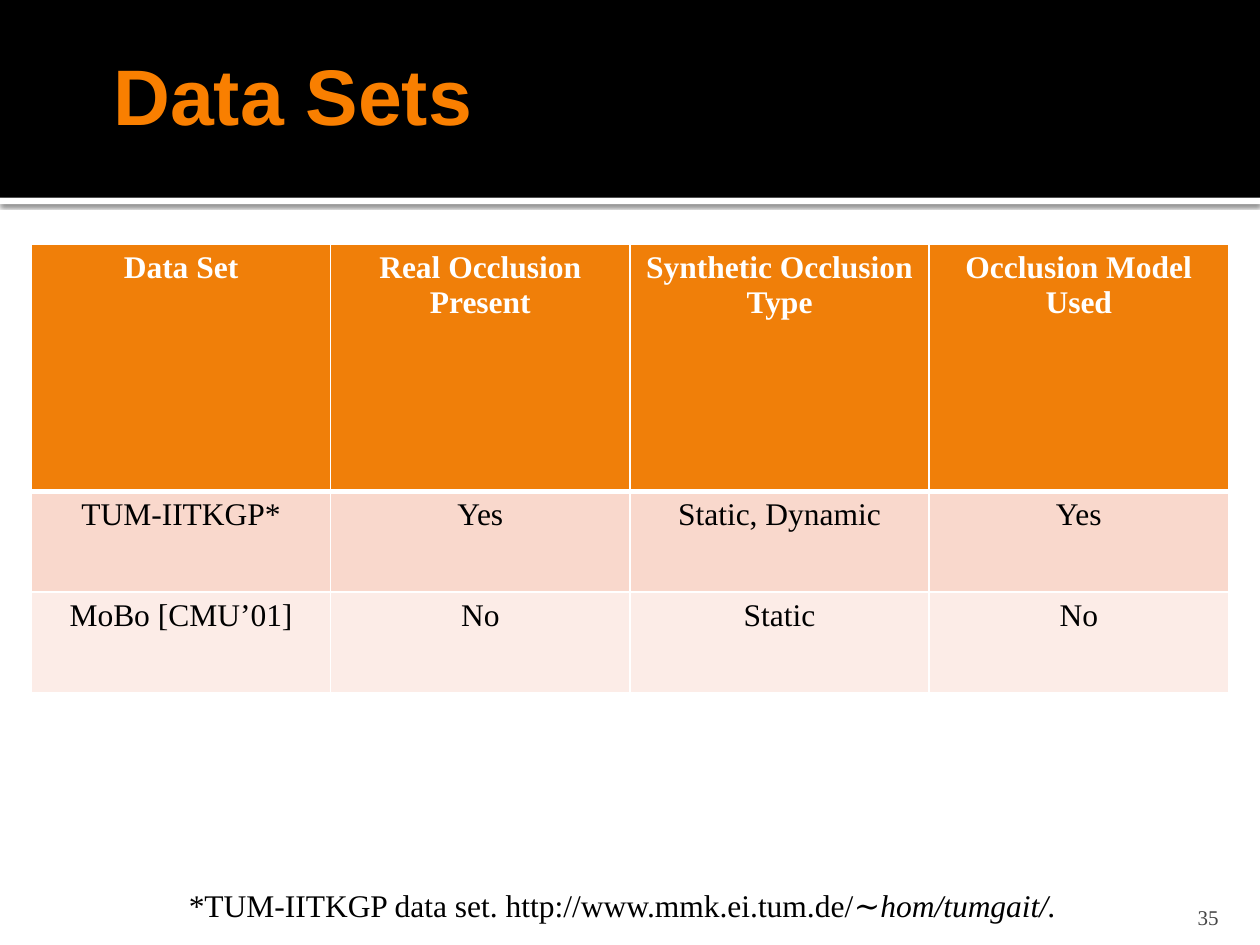
from pptx import Presentation
from pptx.dml.color import RGBColor
from pptx.enum.shapes import MSO_SHAPE as Shape
from pptx.enum.text import MSO_ANCHOR as Anchor, PP_ALIGN as Align
from pptx.oxml import parse_xml
from pptx.oxml.ns import nsdecls
from pptx.util import Inches, Pt

WHITE = RGBColor(0xFF, 0xFF, 0xFF)
BLACK = RGBColor(0x00, 0x00, 0x00)
TITLE_ORANGE = RGBColor(0xF9, 0x7F, 0x00)
HEADER_ORANGE = RGBColor(0xF0, 0x7F, 0x09)
DARK_PINK = RGBColor(0xF9, 0xD8, 0xCC)
LIGHT_PINK = RGBColor(0xFC, 0xEC, 0xE7)
GREY = RGBColor(0x45, 0x45, 0x45)

SERIF = "Times New Roman"
ROW_FILLS = [HEADER_ORANGE, DARK_PINK, LIGHT_PINK]
ROW_HEIGHTS = [1.96, 0.8, 0.8]
DATA_SETS = [
    ["Data Set", "Real Occlusion Present", "Synthetic Occlusion\nType", "Occlusion Model Used"],
    ["TUM-IITKGP*", "Yes", "Static, Dynamic", "Yes"],
    ["MoBo [CMU’01]", "No", "Static", "No"],
]


def style_font(font, size, color, name=SERIF, bold=False):
    font.name = name
    font.size = Pt(size)
    font.color.rgb = color
    font.bold = bold


def add_band(slide, top, height, color):
    band = slide.shapes.add_shape(Shape.RECTANGLE, 0, Inches(top), Inches(10), Inches(height))
    band.shadow.inherit = False
    band.fill.solid()
    band.fill.fore_color.rgb = color
    band.line.fill.background()
    return band


def add_drop_shadow(band):
    effects = band._element.spPr.find("{http://schemas.openxmlformats.org/drawingml/2006/main}effectLst")
    effects.append(parse_xml(
        f'<a:outerShdw {nsdecls("a")} blurRad="{Pt(2.5)}" dist="{Pt(0.8)}" dir="5400000" '
        'algn="tl" rotWithShape="0"><a:srgbClr val="000000"><a:alpha val="60000"/>'
        '</a:srgbClr></a:outerShdw>'))


def add_text(slide, left, top, width, height, text, anchor=Anchor.TOP):
    box = slide.shapes.add_textbox(Inches(left), Inches(top), Inches(width), Inches(height))
    frame = box.text_frame
    frame.word_wrap = True
    frame.vertical_anchor = anchor
    frame.text = text
    return frame


def set_borders(cell, widths):
    properties = cell._tc.get_or_add_tcPr()
    for side, width in zip("LRTB", widths):
        properties.append(parse_xml(
            f'<a:ln{side} {nsdecls("a")} w="{Pt(width)}"><a:solidFill>'
            f'<a:srgbClr val="{WHITE}"/></a:solidFill></a:ln{side}>'))


def add_data_table(slide):
    rows, columns = len(DATA_SETS), len(DATA_SETS[0])
    table = slide.shapes.add_table(rows, columns, Inches(0.25), Inches(1.94),
                                   Inches(9.5), Inches(sum(ROW_HEIGHTS))).table
    for r, (values, fill, height) in enumerate(zip(DATA_SETS, ROW_FILLS, ROW_HEIGHTS)):
        table.rows[r].height = Inches(height)
        is_header = r == 0
        for c, value in enumerate(values):
            cell = table.cell(r, c)
            # A thick rule separates the header from the body
            set_borders(cell, [1, 1, 3 if r == 1 else 1, 3 if is_header else 1])
            cell.fill.solid()
            cell.fill.fore_color.rgb = fill
            cell.text_frame.text = value
            for paragraph in cell.text_frame.paragraphs:
                paragraph.alignment = Align.CENTER
                style_font(paragraph.runs[0].font, 18, WHITE if is_header else BLACK, bold=is_header)


def add_title(slide):
    frame = add_text(slide, 0.8, 0.25, 8.77, 1, "Data Sets", Anchor.MIDDLE)
    frame.margin_right = Inches(0.05)
    style_font(frame.paragraphs[0].runs[0].font, 45, TITLE_ORANGE, "Arial", bold=True)


def add_slide_number(slide):
    frame = add_text(slide, 8.97, 7.08, 0.8, 0.3, "35", Anchor.BOTTOM)
    frame.margin_bottom = 0
    number = frame.paragraphs[0]
    number.alignment = Align.RIGHT
    style_font(number.runs[0].font, 12, GREY)


def add_footnote(slide):
    frame = add_text(slide, 0.75, 6.92, 8.17, 0.46,
                     "\t*TUM-IITKGP data set. http://www.mmk.ei.tum.de/")
    footnote = frame.paragraphs[0]
    footnote.alignment = Align.JUSTIFY
    footnote.line_spacing = 1.2
    # Hanging indent, reached by the leading tab
    indents = footnote._p.get_or_add_pPr()
    indents.set("marL", str(Inches(0.65)))
    indents.set("indent", str(Inches(-0.65)))
    address_end = footnote.add_run()
    address_end.text = "∼hom/tumgait/."
    for run in footnote.runs:
        style_font(run.font, 18, BLACK)
    address_end.font.italic = True


def main():
    deck = Presentation()
    deck.slide_width, deck.slide_height = Inches(10), Inches(7.5)
    slide = deck.slides.add_slide(deck.slide_layouts[6])

    # Title band with a shadowed white strip under it
    add_drop_shadow(add_band(slide, 1.57, 0.05, WHITE))
    add_band(slide, 0, 1.57, BLACK)
    add_title(slide)

    # Table and footer
    add_data_table(slide)
    add_slide_number(slide)
    add_footnote(slide)

    deck.save("out.pptx")


if __name__ == "__main__":
    main()
